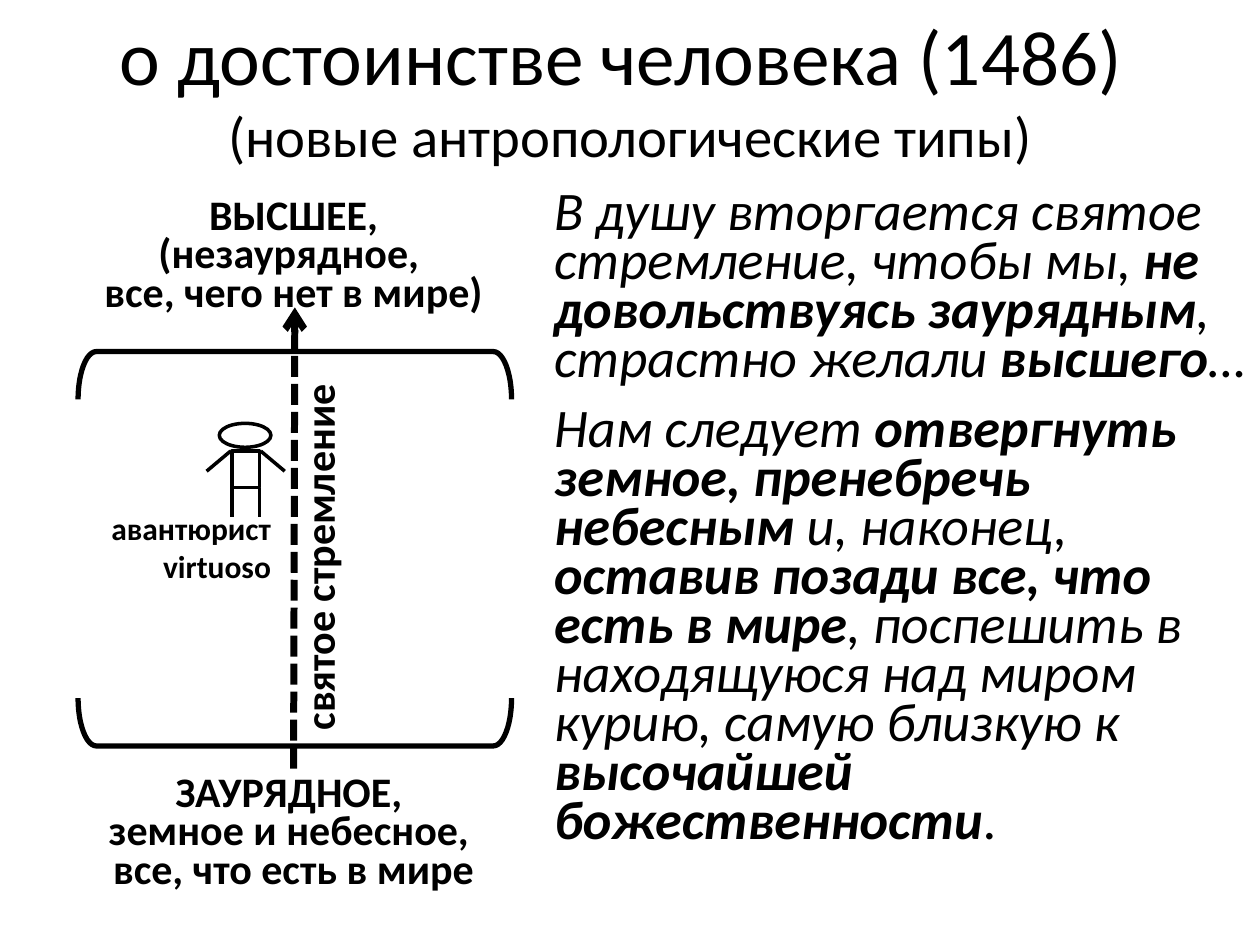
from typing import NamedTuple

from lxml import etree
from pptx import Presentation
from pptx import util as u
from pptx.dml.color import RGBColor
from pptx.enum import dml, shapes, text
from pptx.oxml.ns import qn

SLIDE_W, SLIDE_H = u.Inches(10), u.Inches(7.5)
CELL = SLIDE_W / 40
BLACK = RGBColor(0, 0, 0)
FONT = "Calibri"
LEFT, CENTER, RIGHT = text.PP_ALIGN.LEFT, text.PP_ALIGN.CENTER, text.PP_ALIGN.RIGHT


class Run(NamedTuple):
    words: str
    bold: bool = False
    italic: bool = False
    size: float | None = None


class Frame(NamedTuple):
    col: float
    row: float
    cols: float
    rows: float


class Outline(NamedTuple):
    preset: shapes.MSO_SHAPE
    frame: Frame
    weight: float
    rotation: int = 0


class Stroke(NamedTuple):
    start: tuple[float, float]
    end: tuple[float, float]


def grid(*cells: float) -> list[int]:
    return [round(cell * CELL) for cell in cells]


def place(shape, frame: Frame) -> None:
    shape.left, shape.top, shape.width, shape.height = grid(*frame)


def write(shape, paragraphs: list[list[Run]], *, size: float = 24, align=LEFT,
          line: float | None = None, after: float | None = None) -> None:
    for index, runs in enumerate(paragraphs):
        body = shape.text_frame
        paragraph = body.paragraphs[0] if index == 0 else body.add_paragraph()
        paragraph.alignment = align
        if line:
            paragraph.line_spacing = u.Pt(line)
        if after:
            paragraph.space_after = u.Pt(after)
        for part in runs:
            run = paragraph.add_run()
            run.text = part.words.rstrip("\n")
            font = run.font
            font.name, font.size = FONT, u.Pt(part.size or size)
            font.bold, font.italic = part.bold, part.italic
            font.color.rgb = BLACK
            if part.words.endswith("\n"):
                paragraph.add_line_break()


def add_text(slide, frame: Frame, paragraphs: list[list[Run]], *,
             rotation: int = 0, side_inset: float = 0.1, **style):
    box = slide.shapes.add_textbox(*grid(*frame))
    box.rotation = rotation
    body = box.text_frame
    body.word_wrap = True
    body.auto_size = text.MSO_AUTO_SIZE.SHAPE_TO_FIT_TEXT
    body.margin_left = body.margin_right = u.Inches(side_inset)
    write(box, paragraphs, **style)


def bold_lines(*lines: str) -> list[list[Run]]:
    return [[Run(words, bold=True)] for words in lines]


def add_outline(slide, outline: Outline):
    shape = slide.shapes.add_shape(outline.preset, *grid(*outline.frame))
    shape.rotation = outline.rotation
    shape.shadow.inherit = False
    shape.fill.background()
    shape.line.color.rgb = BLACK
    shape.line.width = u.Pt(outline.weight)
    return shape


def add_stroke(slide, stroke: Stroke, weight: float):
    connector = slide.shapes.add_connector(
        shapes.MSO_CONNECTOR.STRAIGHT, *grid(*stroke.start, *stroke.end))
    connector.line.color.rgb = BLACK
    connector.line.width = u.Pt(weight)
    etree.SubElement(connector._element.spPr, qn("a:effectLst"))
    return connector


def add_striving_arrow(slide) -> None:
    arrow = add_stroke(slide, Stroke((9.32, 24.4), (9.36, 9.76)), 4)
    arrow.line.dash_style = dml.MSO_LINE.SQUARE_DOT
    outline = arrow.line._get_or_add_ln()
    outline.find(qn("a:prstDash")).set("val", "sysDash")
    etree.SubElement(outline, qn("a:tailEnd"), type="arrow")


def add_world_brackets(slide) -> None:
    for row, rotation in ((16.04, 90), (5.04, 270)):
        bracket = add_outline(slide, Outline(
            shapes.MSO_SHAPE.RIGHT_BRACKET, Frame(8.6, row, 1.52, 13.76), 3, rotation))
        bracket.adjustments[0] = 0.38


def add_adventurer(slide) -> None:
    head = Outline(shapes.MSO_SHAPE.OVAL, Frame(6.96, 13.44, 1.64, 0.76), 2)
    torso = Outline(shapes.MSO_SHAPE.RECTANGLE, Frame(7.36, 14.32, 0.88, 1.16), 2)
    for part in (head, torso):
        add_outline(slide, part)
    shoulder, waist = torso.frame.row, torso.frame.row + torso.frame.rows
    middle = torso.frame.col + torso.frame.cols / 2
    for side in (-1, 1):
        hip = middle + side * torso.frame.cols / 2
        leg = Stroke((hip, waist), (hip, waist + 0.92))
        arm = Stroke((middle + side * 0.48, shoulder), (middle + side * 1.24, shoulder + 0.64))
        for limb in (leg, arm):
            add_stroke(slide, limb, 2)


QUOTE = [
    [
        Run("В душу вторгается святое стремление, чтобы мы, ", italic=True),
        Run("не довольствуясь заурядным", True, True),
        Run(", страстно желали ", italic=True),
        Run("высшего", True, True),
        Run("…", italic=True),
    ],
    [
        Run("Нам следует ", italic=True),
        Run("отвергнуть земное, пренебречь небесным ", True, True),
        Run("и, наконец, ", italic=True),
        Run("оставив позади все, что есть в мире", True, True),
        Run(", поспешить в находящуюся над миром курию, самую близкую к ", italic=True),
        Run("высочайшей божественности", True, True),
        Run("."),
    ],
]


def main() -> None:
    deck = Presentation()
    deck.slide_width, deck.slide_height = SLIDE_W, SLIDE_H
    slide = deck.slides.add_slide(deck.slide_layouts[5])

    title = slide.shapes.title
    place(title, Frame(2, 0.32, 36, 5))
    title.text_frame.auto_size = text.MSO_AUTO_SIZE.NONE
    title.text_frame.vertical_anchor = text.MSO_ANCHOR.MIDDLE
    write(title, [[Run("о достоинстве человека (1486) \n", size=44.1),
                   Run("(новые антропологические типы)", size=32.4)]], align=CENTER)

    add_text(slide, Frame(17.2, 5.92, 22.8, 23.12), QUOTE, size=31, line=28, after=12)

    add_world_brackets(slide)
    add_text(slide, Frame(1.24, 24.48, 16.16, 4.12),
             bold_lines("ЗАУРЯДНОЕ, ", "земное и небесное, ", "все, что есть в мире"),
             align=CENTER, line=22)
    add_striving_arrow(slide)
    add_text(slide, Frame(2.72, 6.16, 13.2, 4.16),
             bold_lines("ВЫСШЕЕ,", "(незаурядное, ", "все, чего нет в мире)"),
             align=CENTER, line=22, side_inset=0)
    add_adventurer(slide)
    add_text(slide, Frame(2.76, 15.96, 6.24, 2.84),
             bold_lines("авантюрист virtuoso"), size=18, align=RIGHT)
    add_text(slide, Frame(3.84, 16.32, 12.52, 2),
             bold_lines("святое стремление"), rotation=270)

    deck.save("out.pptx")


if __name__ == "__main__":
    main()
